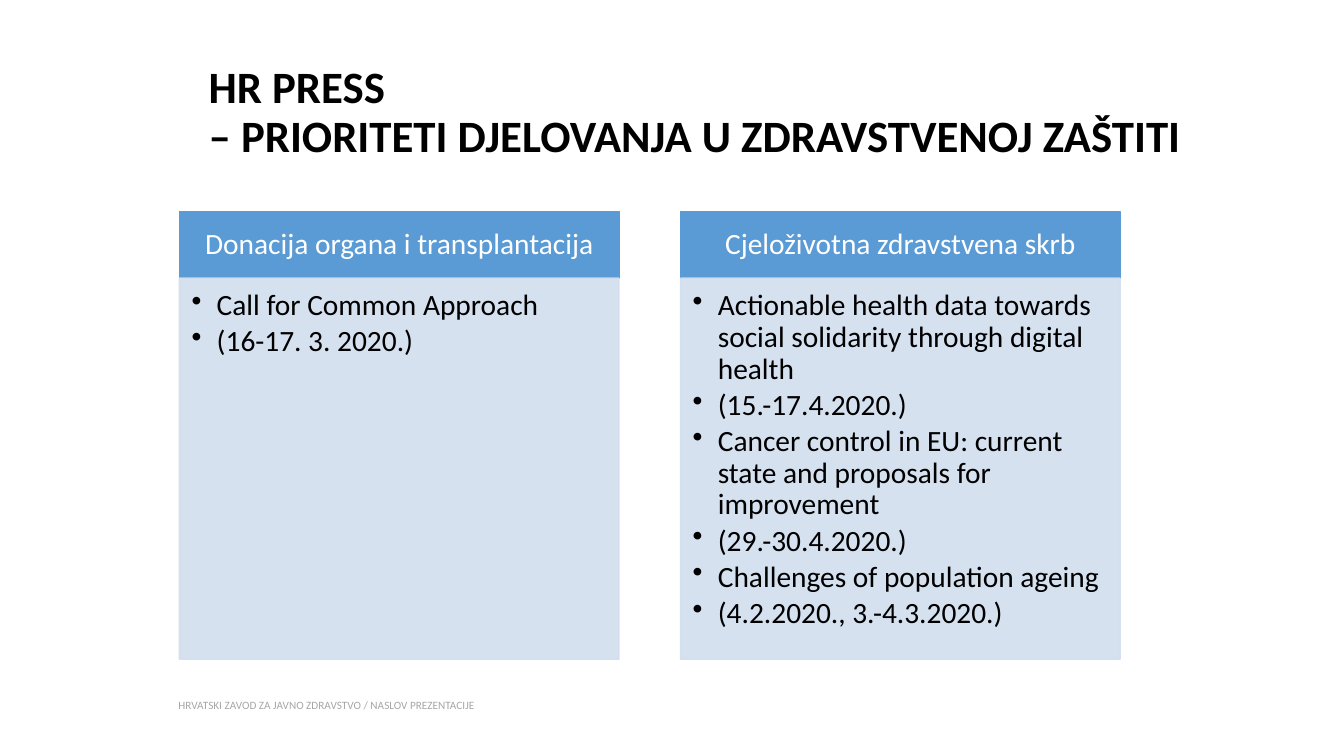
import pptx
import pptx.dml.color
import pptx.enum.shapes
import pptx.enum.text
import pptx.oxml.ns
import pptx.util
import lxml.etree

Inches = pptx.util.Inches
Pt = pptx.util.Pt
ALIGN = pptx.enum.text.PP_ALIGN
ANCHOR = pptx.enum.text.MSO_ANCHOR
COLORS = {
    "header": "5B9BD5",
    "body": "D2DEEF",
    "text": "000000",
    "light": "FFFFFF",
    "footer": "A6A6A6",
}
PRIORITIES = [
    ("Donacija organa i transplantacija",
     ["Call for Common Approach", "(16-17. 3. 2020.)"]),
    ("Cjeloživotna zdravstvena skrb",
     ["Actionable health data towards social solidarity through digital health",
      "(15.-17.4.2020.)",
      "Cancer control in EU: current state and proposals for improvement",
      "(29.-30.4.2020.)",
      "Challenges of population ageing",
      "(4.2.2020., 3.-4.3.2020.)"]),
]


class PrioritySlide:
    """Holds the style and the current slide of the priorities overview."""

    font = "Calibri"

    def __init__(self, slide):
        self.slide = slide

    def color(self, name):
        return pptx.dml.color.RGBColor.from_string(COLORS[name])

    def fill_text(self, frame, text, size, color, insets, anchor=ANCHOR.MIDDLE,
                  align=ALIGN.LEFT, spacing=0.9, after=0, bold=False, bullets=False):
        frame.text = text
        frame.word_wrap = True
        frame.vertical_anchor = anchor
        (frame.margin_left, frame.margin_top,
         frame.margin_right, frame.margin_bottom) = map(Inches, insets)
        for paragraph in frame.paragraphs:
            if bullets:
                self.bullet(paragraph)
            paragraph.alignment = align
            paragraph.line_spacing = spacing
            paragraph.space_after = Pt(after)
            for run in paragraph.runs:
                run.font.name = self.font
                run.font.size = Pt(size)
                run.font.bold = bold
                run.font.color.rgb = self.color(color)

    def bullet(self, paragraph):
        paragraph.level = 1
        properties = paragraph._p.get_or_add_pPr()
        properties.set("marL", str(Inches(0.25)))
        properties.set("indent", str(-Inches(0.25)))
        mark = lxml.etree.SubElement(properties, pptx.oxml.ns.qn("a:buChar"))
        mark.set("char", "•")

    def text(self, text, box, size, color, insets, **style):
        textbox = self.slide.shapes.add_textbox(*map(Inches, box))
        self.fill_text(textbox.text_frame, text, size, color, insets, **style)

    def panel(self, text, box, fill, color, insets, opacity=100, **style):
        panel = self.slide.shapes.add_shape(
            pptx.enum.shapes.MSO_SHAPE.RECTANGLE, *map(Inches, box))
        panel.shadow.inherit = False
        panel.fill.solid()
        panel.fill.fore_color.rgb = self.color(fill)
        panel.line.color.rgb = self.color(fill)
        panel.line.width = Pt(1)
        if opacity < 100:
            for tint in panel._element.spPr.iter(pptx.oxml.ns.qn("a:srgbClr")):
                alpha = lxml.etree.SubElement(tint, pptx.oxml.ns.qn("a:alpha"))
                alpha.set("val", str(opacity * 1000))
        self.fill_text(panel.text_frame, text, 21, color, insets, **style)

    def column(self, left, heading, items):
        top, width, header_height, body_height = 2.1, 4.36, 0.66, 3.78
        self.panel(heading, (left, top, width, header_height), "header", "light",
                   (0.16, 0.09, 0.16, 0.09), align=ALIGN.CENTER)
        self.panel("\n".join(items),
                   (left, top + header_height, width, body_height), "body", "text",
                   (0.12, 0.12, 0.16, 0.18), opacity=90, anchor=ANCHOR.TOP,
                   after=3.15, bullets=True)


def main():
    presentation = pptx.Presentation()
    presentation.slide_width = Inches(13.33)
    presentation.slide_height = Inches(7.5)
    overview = PrioritySlide(
        presentation.slides.add_slide(presentation.slide_layouts[6]))
    overview.text("HRVATSKI ZAVOD ZA JAVNO ZDRAVSTVO / NASLOV PREZENTACIJE",
                  (1.77, 6.92, 10.46, 0.14), 8, "footer", (0, 0, 0, 0),
                  align=ALIGN.JUSTIFY, spacing=1.0)
    overview.text("HR PRESS\v– PRIORITETI DJELOVANJA U ZDRAVSTVENOJ ZAŠTITI",
                  (1.97, 0.4, 10.45, 1.45), 32, "text", (0.1, 0.05, 0.1, 0.05),
                  bold=True)
    for index, (heading, items) in enumerate(PRIORITIES):
        overview.column(1.78 + index * 4.97, heading, items)
    presentation.save("out.pptx")


if __name__ == "__main__":
    main()
